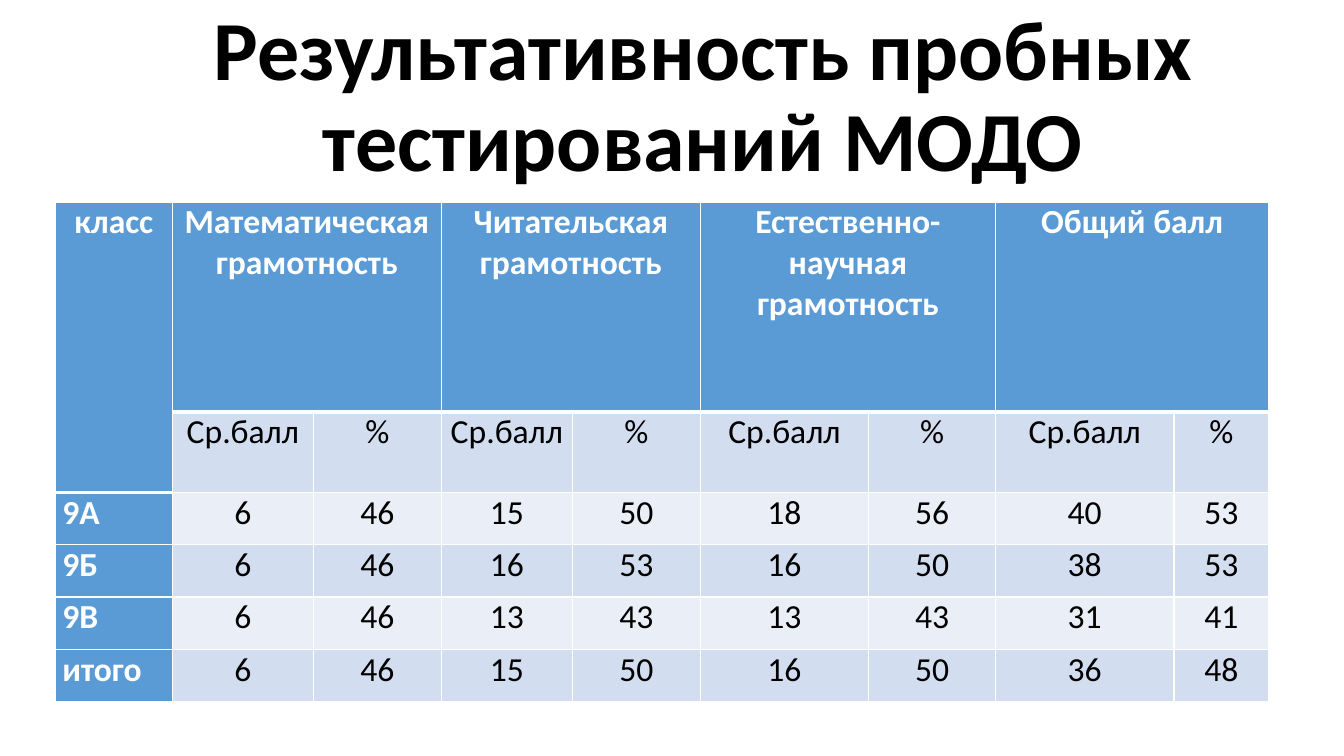
from lxml.etree import SubElement
from pptx import Presentation
from pptx.dml.color import RGBColor
from pptx.enum.text import MSO_ANCHOR as Anchor, MSO_AUTO_SIZE as AutoSize, PP_ALIGN as Align
from pptx.oxml.ns import qn
from pptx.util import Pt

WHITE, BLACK, BLUE = "FFFFFF", "000000", "5B9BD5"
BANDS = ["EAEFF7", "D2DEEF"]
COLUMN_WIDTHS = [83.5, 100.8, 91.4, 93.6, 91.4, 120.2, 90.7, 127.4, 67.7]
ROW_HEIGHTS = [149.8, 57.6] + [37.4] * 4
SUBJECTS = ["Математическая грамотность", "Читательская грамотность",
            "Естественно-научная грамотность", "Общий балл"]
RESULTS = [
    ["9А", 6, 46, 15, 50, 18, 56, 40, 53],
    ["9Б", 6, 46, 16, 53, 16, 50, 38, 53],
    ["9В", 6, 46, 13, 43, 13, 43, 31, 41],
    ["итого", 6, 46, 15, 50, 16, 50, 36, 48],
]


def color(value):
    return RGBColor.from_string(value)


def apply(target, values):
    for name, value in values.items():
        setattr(target, name, value)


def write(frame, text, size, ink, bold, align):
    frame.text = text
    paragraph = frame.paragraphs[0]
    paragraph.alignment = align
    font = paragraph.runs[0].font if paragraph.runs else paragraph.font
    apply(font, {"size": Pt(size), "bold": bold, "name": "Calibri"})
    font.color.rgb = color(ink)


def draw_borders(cell, widths):
    properties = cell._tc.get_or_add_tcPr()
    for side, width in widths.items():
        border = SubElement(properties, qn(f"a:ln{side}"), w=str(Pt(width)))
        fill = SubElement(border, qn("a:solidFill"))
        SubElement(fill, qn("a:srgbClr"), val=WHITE)


def add_heading(slide, left, top, width, height):
    heading = slide.shapes.title
    apply(heading, {"left": Pt(left), "top": Pt(top),
                    "width": Pt(width), "height": Pt(height)})
    frame = heading.text_frame
    write(frame, "Результативность пробных тестирований МОДО", 60, BLACK, True, Align.CENTER)
    apply(frame, {"word_wrap": True, "auto_size": AutoSize.NONE,
                  "vertical_anchor": Anchor.BOTTOM})
    frame.paragraphs[0].line_spacing = 0.9


def add_results(slide, left, top, width, height):
    subject_row = ["класс"] + [text for subject in SUBJECTS for text in (subject, "")]
    measure_row = [""] + ["Ср.балл", "%"] * len(SUBJECTS)
    rows = [subject_row, measure_row] + RESULTS
    table = slide.shapes.add_table(len(rows), len(COLUMN_WIDTHS), Pt(left), Pt(top),
                                   Pt(width), Pt(height)).table
    for column, column_width in zip(table.columns, COLUMN_WIDTHS):
        column.width = Pt(column_width)
    for row, row_height in zip(table.rows, ROW_HEIGHTS):
        row.height = Pt(row_height)

    for r, values in enumerate(rows):
        for c, value in enumerate(values):
            cell = table.cell(r, c)
            is_header = r == 0 or c == 0
            header_end = 1 if c == 0 else 0
            draw_borders(cell, {"L": 1, "R": 1,
                                "T": 3 if r == header_end + 1 else 1,
                                "B": 3 if r in (0, header_end) else 1})
            cell.fill.solid()
            cell.fill.fore_color.rgb = color(BLUE if is_header else BANDS[r % 2])
            apply(cell, {"margin_left": Pt(5), "margin_right": Pt(5),
                         "margin_top": 0, "margin_bottom": 0})
            write(cell.text_frame, str(value), 24, WHITE if is_header else BLACK, is_header,
                  Align.LEFT if c == 0 and r > 1 else Align.CENTER)

    table.cell(0, 0).merge(table.cell(1, 0))
    for c in range(1, len(COLUMN_WIDTHS), 2):
        table.cell(0, c).merge(table.cell(0, c + 1))


def main():
    deck = Presentation()
    apply(deck, {"slide_width": Pt(960), "slide_height": Pt(540)})
    slide = deck.slides.add_slide(deck.slide_layouts[5])
    add_heading(slide, 76.3, 10, 851.8, 129)
    add_results(slide, 39.6, 144.3, sum(COLUMN_WIDTHS), sum(ROW_HEIGHTS))
    deck.save("out.pptx")


if __name__ == "__main__":
    main()
